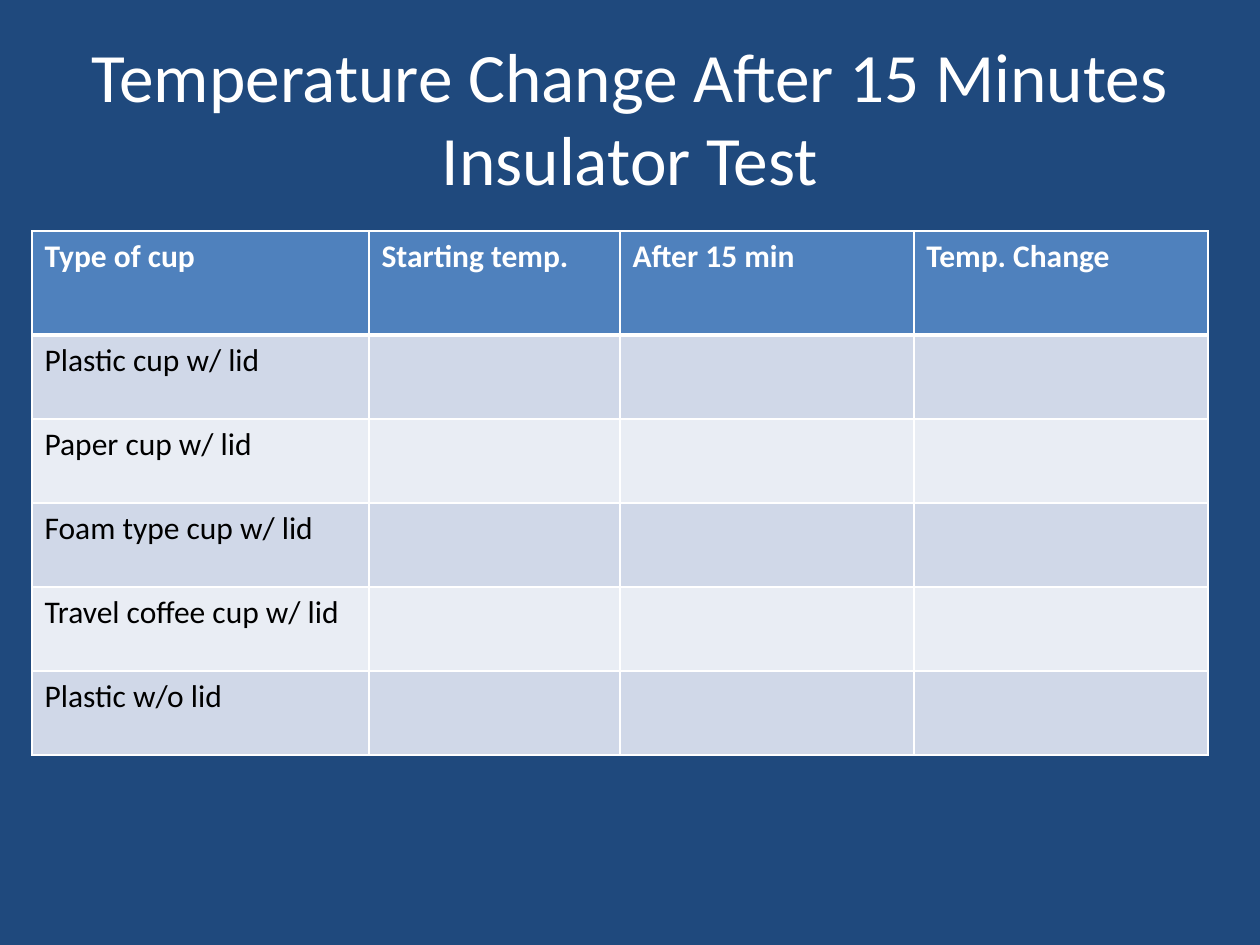
from dataclasses import dataclass
from lxml.etree import SubElement
from pptx import Presentation
from pptx.dml.color import RGBColor
from pptx.enum.text import MSO_ANCHOR, PP_ALIGN
from pptx.oxml.ns import qn
from pptx.util import Pt


@dataclass(frozen=True)
class Theme:
    font: str = "Calibri"
    back: str = "1F497D"
    head: str = "4F81BD"
    bands: tuple = ("D0D8E8", "E9EDF4")
    light: str = "FFFFFF"
    dark: str = "000000"
    title: float = 39.6
    body: float = 18
    thin: int = 1
    thick: int = 3


THEME = Theme()
TITLE = "Temperature Change After 15 Minutes\nInsulator Test"
HEADS = ["Type of cup", "Starting temp.", "After 15 min", "Temp. Change"]
CUPS = [
    "Plastic cup w/ lid",
    "Paper cup w/ lid",
    "Foam type cup w/ lid",
    "Travel coffee cup w/ lid",
    "Plastic w/o lid",
]
PAGE = (1260, 945)
TITLE_BOX = (63, 37, 1134, 158)
TABLE_AT = (32, 231)
WIDTHS = [337, 251, 294, 294]
HEAD_HIGH, ROW_HIGH = 104, 84


def px(count):
    return round(count * 914400 / 126)


def style(para, size, color, bold=False):
    for run in para.runs:
        font = run.font
        font.name, font.size, font.bold = THEME.font, Pt(size), bold
        font.color.rgb = RGBColor.from_string(color)


def border(cell, side, width):
    props = cell._tc.get_or_add_tcPr()
    line = SubElement(props, qn(f"a:ln{side}"), w=str(Pt(width)))
    fill = SubElement(line, qn("a:solidFill"))
    SubElement(fill, qn("a:srgbClr"), val=THEME.light)


def add_title(slide):
    frame = slide.shapes.add_textbox(*map(px, TITLE_BOX)).text_frame
    frame.word_wrap = True
    frame.vertical_anchor = MSO_ANCHOR.MIDDLE
    para = frame.paragraphs[0]
    para.text = TITLE
    para.alignment = PP_ALIGN.CENTER
    style(para, THEME.title, THEME.light)


def add_grid(slide):
    rows = [HEADS] + [[cup] + [""] * (len(HEADS) - 1) for cup in CUPS]
    highs = [HEAD_HIGH] + [ROW_HIGH] * len(CUPS)
    size = (sum(WIDTHS), sum(highs))
    table = slide.shapes.add_table(
        len(rows), len(HEADS), *map(px, TABLE_AT + size)
    ).table
    for col, width in zip(table.columns, WIDTHS):
        col.width = px(width)
    for r, (texts, high) in enumerate(zip(rows, highs)):
        table.rows[r].height = px(high)
        head = r == 0
        back = THEME.head if head else THEME.bands[(r - 1) % 2]
        color = THEME.light if head else THEME.dark
        for c, text in enumerate(texts):
            cell = table.cell(r, c)
            for side in "LRTB":
                heavy = (r, side) in ((0, "B"), (1, "T"))
                border(cell, side, THEME.thick if heavy else THEME.thin)
            cell.fill.solid()
            cell.fill.fore_color.rgb = RGBColor.from_string(back)
            cell.text_frame.text = text
            style(cell.text_frame.paragraphs[0], THEME.body, color, head)


def main():
    deck = Presentation()
    deck.slide_width, deck.slide_height = map(px, PAGE)
    slide = deck.slides.add_slide(deck.slide_layouts[6])
    slide.background.fill.solid()
    slide.background.fill.fore_color.rgb = RGBColor.from_string(THEME.back)
    add_title(slide)
    add_grid(slide)
    deck.save("out.pptx")


if __name__ == "__main__":
    main()
